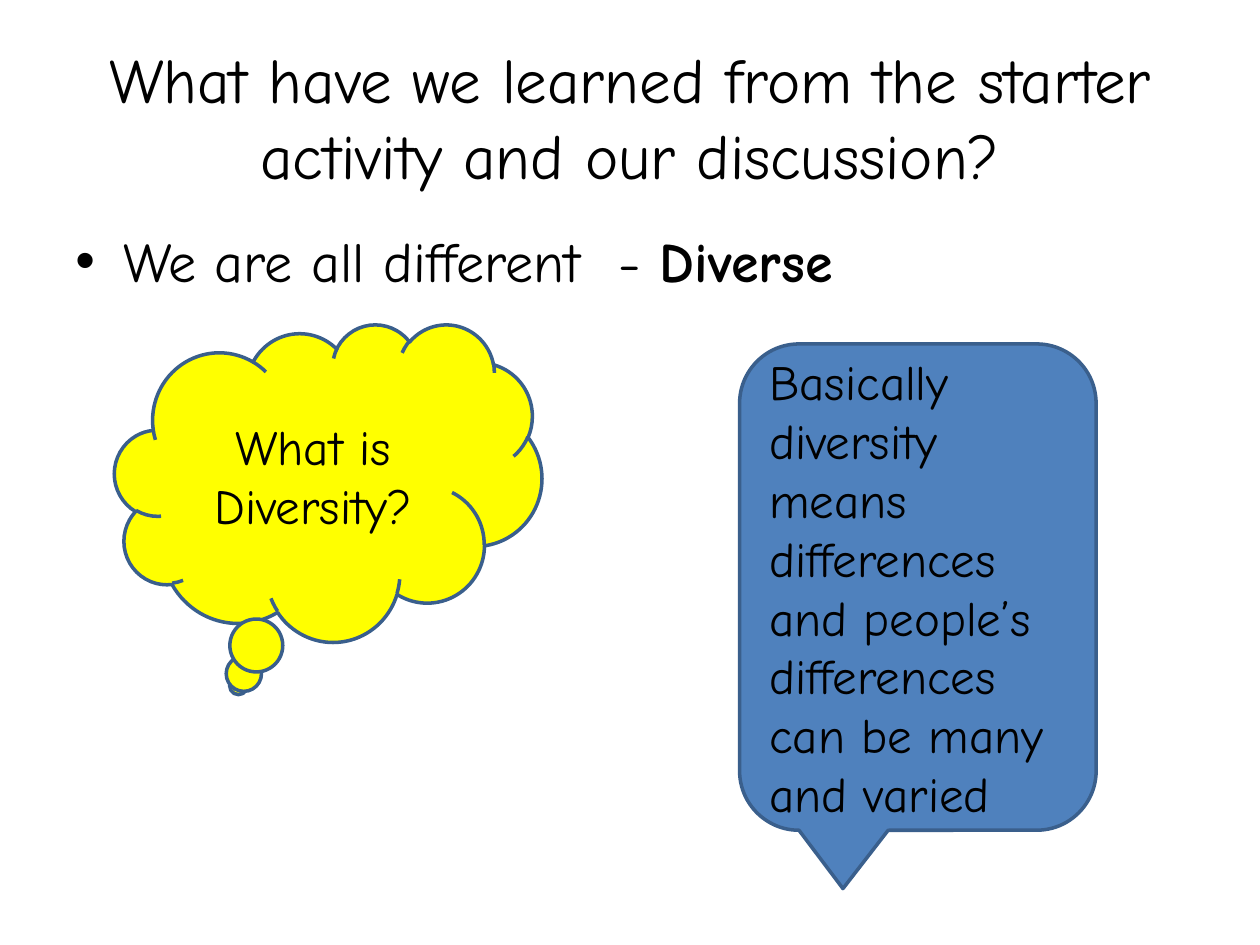
from dataclasses import dataclass
from typing import Any

from lxml.etree import SubElement
from pptx import Presentation
from pptx.dml.color import RGBColor
from pptx.enum.shapes import MSO_SHAPE as Preset
from pptx.enum.text import MSO_ANCHOR as Anchor, MSO_AUTO_SIZE as AutoSize, PP_ALIGN as Align
from pptx.oxml.ns import qn
from pptx.util import Inches, Pt


@dataclass(frozen=True)
class Theme:
    """Colours, font and type sizes of the slide."""
    font: str = "Comic Neue"
    text: RGBColor = RGBColor(0x00, 0x00, 0x00)
    yellow: RGBColor = RGBColor(0xFF, 0xFF, 0x00)
    blue: RGBColor = RGBColor(0x4F, 0x81, 0xBD)
    outline: RGBColor = RGBColor(0x3A, 0x5F, 0x8C)
    outline_width: Pt = Pt(2)
    title_size: Pt = Pt(36)
    body_size: Pt = Pt(32)
    callout_size: Pt = Pt(28)


@dataclass(frozen=True)
class Box:
    """Position and size in inches."""
    left: float
    top: float
    width: float
    height: float

    def lengths(self) -> tuple[Inches, ...]:
        """Return the four values as lengths."""
        return tuple(Inches(value) for value in (self.left, self.top, self.width, self.height))


@dataclass(frozen=True)
class Callout:
    """A filled callout whose tail tip is an offset from its centre."""
    preset: Preset
    box: Box
    fill: RGBColor
    tail: tuple[float, float]
    align: Align
    text: str


THEME = Theme()
TITLE = "What have we learned from the starter activity and our discussion?"
TITLE_BOX = Box(0.5, 0.3, 9, 1.25)
BODY_BOX = Box(0.5, 1.75, 9, 4.95)
BULLET_INDENT = Inches(0.38)
CALLOUTS = (
    Callout(Preset.CLOUD_CALLOUT, Box(0.91, 2.57, 3.39, 2.52), THEME.yellow,
            (-0.21, 0.64), Align.CENTER, "What is Diversity?"),
    Callout(Preset.ROUNDED_RECTANGULAR_CALLOUT, Box(5.87, 2.73, 2.83, 3.86), THEME.blue,
            (-0.21, 0.62), Align.LEFT,
            "Basically diversity means differences and people’s differences can be many and varied"),
)


def apply(target: Any, values: dict[str, Any]) -> None:
    """Set every named attribute on the target."""
    for name, value in values.items():
        setattr(target, name, value)


def add_run(paragraph: Any, text: str, size: Pt, bold: bool = False) -> None:
    """Append a run in the theme font."""
    run = paragraph.add_run()
    run.text = text
    apply(run.font, {"name": THEME.font, "size": size, "bold": bold})
    run.font.color.rgb = THEME.text


def prepare_text(shape: Any, anchor: Anchor, align: Align) -> Any:
    """Format the text frame and return its first paragraph."""
    frame = shape.text_frame
    apply(frame, {"word_wrap": True, "auto_size": AutoSize.NONE, "vertical_anchor": anchor})
    paragraph = frame.paragraphs[0]
    paragraph.alignment = align
    return paragraph


def add_title(slide: Any) -> None:
    """Place and fill the title placeholder."""
    title = slide.shapes.title
    apply(title, dict(zip(("left", "top", "width", "height"), TITLE_BOX.lengths())))
    add_run(prepare_text(title, Anchor.MIDDLE, Align.CENTER), TITLE, THEME.title_size)


def add_bullet(slide: Any) -> None:
    """Add the bulleted statement with its bold keyword."""
    shape = slide.shapes.add_textbox(*BODY_BOX.lengths())
    paragraph = prepare_text(shape, Anchor.TOP, Align.LEFT)
    paragraph.space_before = Pt(6.4)
    properties = paragraph._p.get_or_add_pPr()
    properties.set("marL", str(BULLET_INDENT))
    properties.set("indent", str(-BULLET_INDENT))
    SubElement(properties, qn("a:buFont"), typeface="Arial")
    SubElement(properties, qn("a:buChar"), char="•")
    add_run(paragraph, "We are all different  - ", THEME.body_size)
    add_run(paragraph, "Diverse", THEME.body_size, bold=True)


def add_callout(slide: Any, callout: Callout) -> None:
    """Draw one callout with its text."""
    shape = slide.shapes.add_shape(callout.preset, *callout.box.lengths())
    shape.shadow.inherit = False
    shape.fill.solid()
    shape.fill.fore_color.rgb = callout.fill
    shape.line.color.rgb = THEME.outline
    shape.line.width = THEME.outline_width
    for index, offset in enumerate(callout.tail):
        shape.adjustments[index] = offset
    add_run(prepare_text(shape, Anchor.MIDDLE, callout.align), callout.text, THEME.callout_size)


def main() -> None:
    """Build and save the presentation."""
    presentation = Presentation()
    apply(presentation, {"slide_width": Inches(10), "slide_height": Inches(7.5)})
    slide = presentation.slides.add_slide(presentation.slide_layouts.get_by_name("Title Only"))
    add_title(slide)
    add_bullet(slide)
    for callout in CALLOUTS:
        add_callout(slide, callout)
    presentation.save("out.pptx")


if __name__ == "__main__":
    main()
